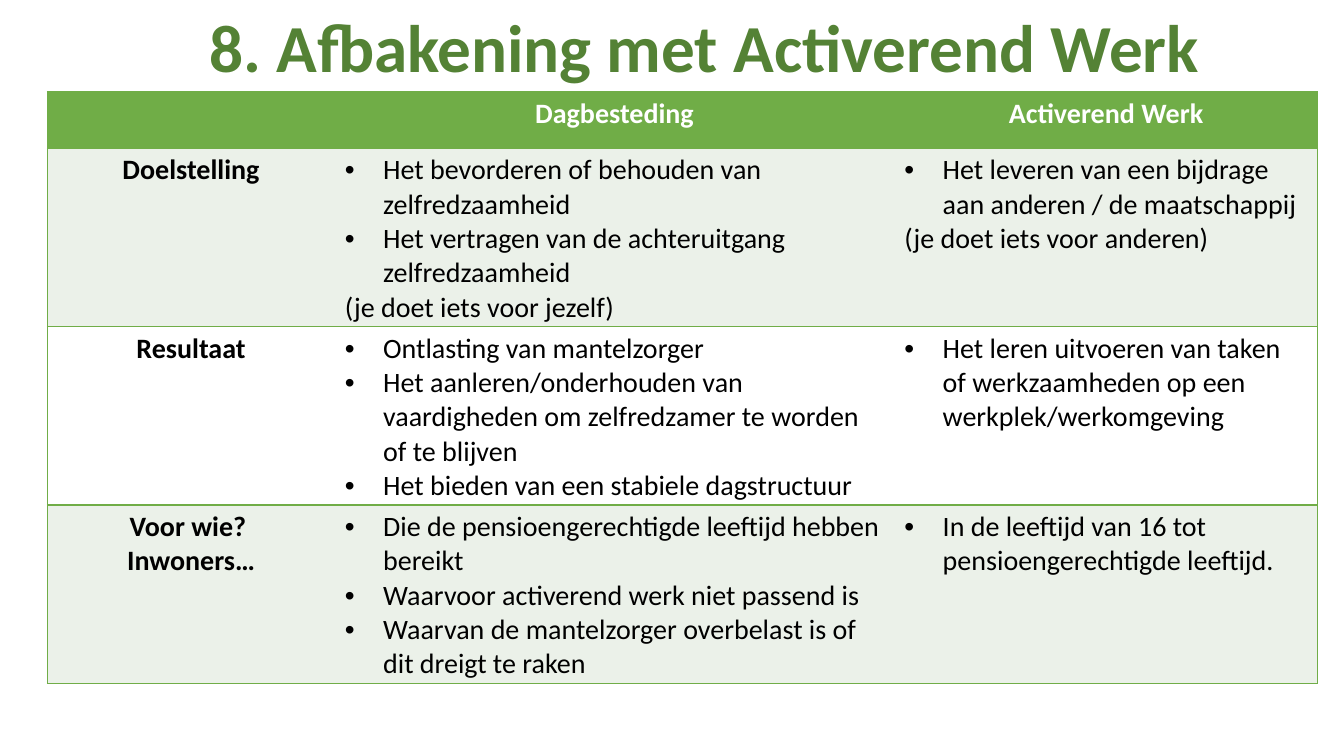
from lxml import etree
from pptx import Presentation
from pptx.dml.color import RGBColor
from pptx.enum.text import MSO_AUTO_SIZE, PP_ALIGN
from pptx.oxml.ns import qn
from pptx.util import Inches, Pt

LEFT, CENTER = PP_ALIGN.LEFT, PP_ALIGN.CENTER
FIT_SHAPE = MSO_AUTO_SIZE.SHAPE_TO_FIT_TEXT
DARK_GREEN = RGBColor(0x54, 0x82, 0x35)
GREEN = RGBColor(0x70, 0xAD, 0x47)
PALE = RGBColor(0xEB, 0xF1, 0xE9)
WHITE = RGBColor(0xFF, 0xFF, 0xFF)
BLACK = RGBColor(0, 0, 0)

TITLE = "8. Afbakening met Activerend Werk"
BULLET = "• "
ROWS = [
    ([], ["Dagbesteding"], ["Activerend Werk"]),
    (["Doelstelling"],
     ["• Het bevorderen of behouden van zelfredzaamheid",
      "• Het vertragen van de achteruitgang zelfredzaamheid",
      "(je doet iets voor jezelf)"],
     ["• Het leveren van een bijdrage aan anderen / de maatschappij",
      "(je doet iets voor anderen)"]),
    (["Resultaat"],
     ["• Ontlasting van mantelzorger",
      "• Het aanleren/onderhouden van vaardigheden om zelfredzamer te worden of te blijven",
      "• Het bieden van een stabiele dagstructuur"],
     ["• Het leren uitvoeren van taken of werkzaamheden op een werkplek/werkomgeving"]),
    (["Voor wie? ", "Inwoners…"],
     ["• Die de pensioengerechtigde leeftijd hebben bereikt",
      "• Waarvoor activerend werk niet passend is",
      "• Waarvan de mantelzorger overbelast is of dit dreigt te raken"],
     ["• In de leeftijd van 16 tot pensioengerechtigde leeftijd."]),
]
COL_WIDTHS = [2.85, 5.55, 4.2]
ROW_HEIGHTS = [0.56] + [1.77] * (len(ROWS) - 1)
TABLE_LEFT, TABLE_TOP = 0.47, 0.91
INDENT = Inches(0.38)


def write(tf, lines, size=20, color=BLACK, bold=False, align=LEFT):
    for i, line in enumerate(lines):
        p = tf.paragraphs[0] if i == 0 else tf.add_paragraph()
        p.alignment = align
        if line.startswith(BULLET):
            pPr = p._p.get_or_add_pPr()
            pPr.set("marL", str(INDENT))
            pPr.set("indent", str(-INDENT))
            etree.SubElement(pPr, qn("a:buFont")).set("typeface", "Arial")
            etree.SubElement(pPr, qn("a:buChar")).set("char", BULLET.strip())
        r = p.add_run()
        r.text = line.removeprefix(BULLET)
        r.font.name, r.font.size, r.font.bold = "Calibri", Pt(size), bold
        r.font.color.rgb = color


def set_borders(cell, visible):
    tcPr = cell._tc.get_or_add_tcPr()
    for i, side in enumerate("LRTB"):
        ln = etree.Element(qn("a:ln" + side), w=str(Pt(1)))
        if side in visible:
            fill = etree.SubElement(ln, qn("a:solidFill"))
            etree.SubElement(fill, qn("a:srgbClr")).set("val", str(GREEN))
        else:
            etree.SubElement(ln, qn("a:noFill"))
        tcPr.insert(i, ln)


def main():
    prs = Presentation()
    prs.slide_width, prs.slide_height = Inches(13.33), Inches(7.5)
    s = prs.slides.add_slide(prs.slide_layouts[6])

    title = s.shapes.add_textbox(Inches(1.98), 0, Inches(10.13), Inches(0.91))
    title.text_frame.word_wrap = False
    title.text_frame.auto_size = FIT_SHAPE
    write(title.text_frame, [TITLE], size=48, color=DARK_GREEN, bold=True)

    table = s.shapes.add_table(
        len(ROWS), len(COL_WIDTHS), Inches(TABLE_LEFT), Inches(TABLE_TOP),
        Inches(sum(COL_WIDTHS)), Inches(sum(ROW_HEIGHTS))).table
    table.first_row = table.horz_banding = False
    for col, width in zip(table.columns, COL_WIDTHS):
        col.width = Inches(width)
    for row, height in zip(table.rows, ROW_HEIGHTS):
        row.height = Inches(height)

    last_col = len(COL_WIDTHS) - 1
    for y, row in enumerate(ROWS):
        for x, lines in enumerate(row):
            cell = table.cell(y, x)
            header, label = y == 0, y == 0 or x == 0
            cell.fill.solid()
            cell.fill.fore_color.rgb = GREEN if header else PALE if y % 2 else WHITE
            set_borders(cell, "TB" + "L" * (x == 0) + "R" * (x == last_col))
            write(cell.text_frame, lines, color=WHITE if header else BLACK,
                  bold=label, align=CENTER if label else LEFT)

    prs.save("out.pptx")


if __name__ == "__main__":
    main()
